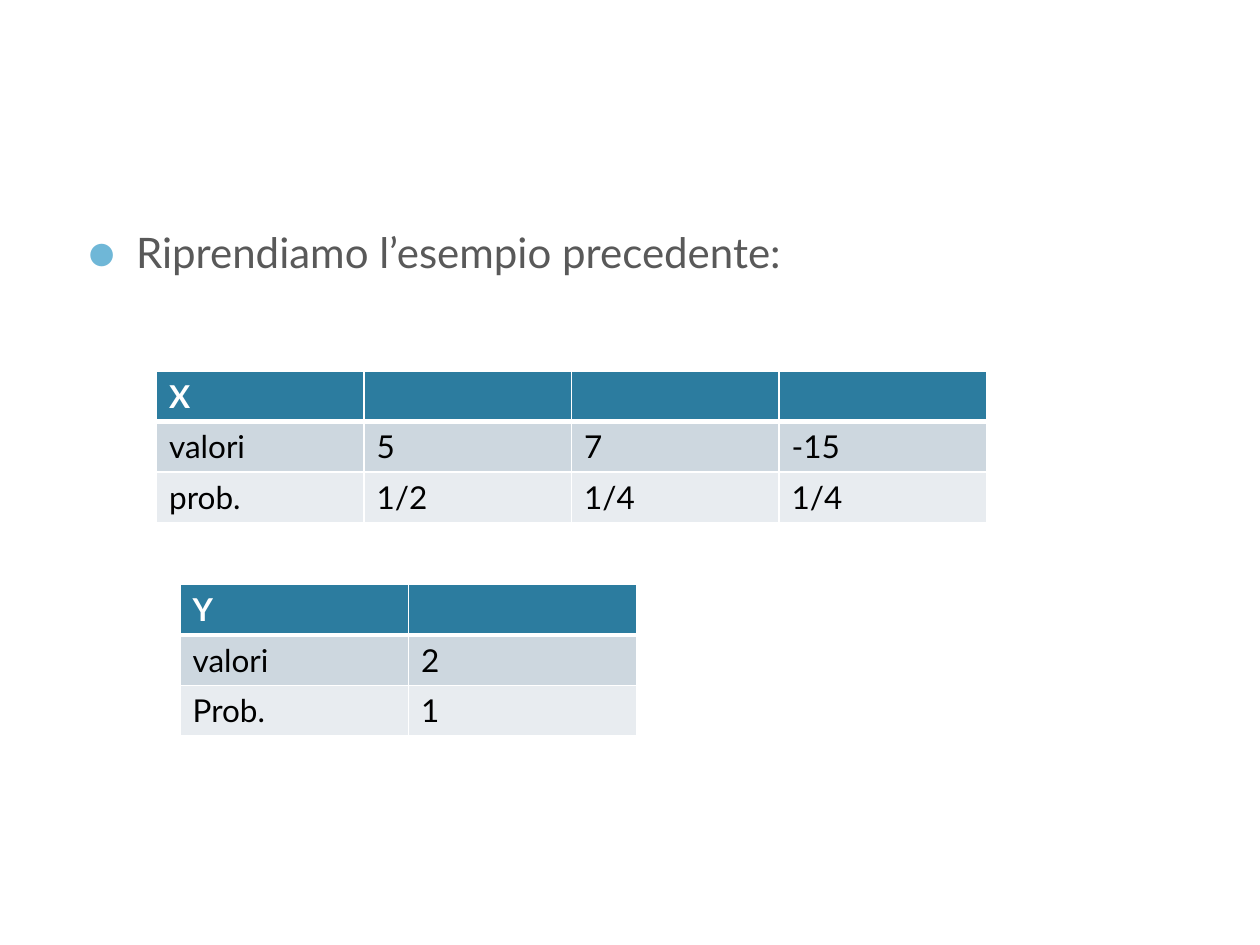
from dataclasses import dataclass

from lxml import etree
from pptx import Presentation
from pptx.dml.color import RGBColor
from pptx.oxml import ns
from pptx.util import Pt


@dataclass(frozen=True)
class Theme:
    font: str = "Lato"
    body: int = 24
    cell: int = 18
    grey: str = "595959"
    black: str = "000000"
    white: str = "FFFFFF"
    dot: str = "6FB7D7"
    head: str = "2C7C9F"
    bands: tuple = ("CDD7DF", "E8ECF0")


THEME = Theme()
ROW = 28.8


def node(parent, tag, **attrs):
    return etree.SubElement(parent, ns.qn(tag), attrs)


def write(frame, words, size=THEME.cell, color=THEME.black, bold=False):
    para = frame.paragraphs[0]
    para.font.size = Pt(size)
    if words:
        run = para.add_run()
        run.text = words
        font = run.font
        font.name, font.size, font.bold = THEME.font, Pt(size), bold
        font.color.rgb = RGBColor.from_string(color)
    return para


def bullet(para, indent):
    props = para._p.get_or_add_pPr()
    props.set("marL", str(Pt(indent)))
    props.set("indent", str(-Pt(indent)))
    node(node(props, "a:buClr"), "a:srgbClr", val=THEME.dot)
    node(props, "a:buSzPct", val="110000")
    node(props, "a:buFont", typeface=THEME.font)
    node(props, "a:buChar", char="●")


def border(cell, base):
    props = cell._tc.get_or_add_tcPr()
    for side, width in (("L", 1), ("R", 1), ("T", 1), ("B", base)):
        line = node(props, f"a:ln{side}", w=str(Pt(width)))
        node(node(line, "a:solidFill"), "a:srgbClr", val=THEME.white)


def grid(slide, left, top, width, rows):
    count = len(rows[0])
    table = slide.shapes.add_table(
        len(rows), count, Pt(left), Pt(top), Pt(width), Pt(ROW * len(rows))
    ).table
    for col in table.columns:
        col.width = Pt(width / count)
    for i, row in enumerate(rows):
        head = i == 0
        fill = THEME.head if head else THEME.bands[(i - 1) % 2]
        for j, words in enumerate(row):
            cell = table.cell(i, j)
            border(cell, 3 if head else 1)
            cell.fill.solid()
            cell.fill.fore_color.rgb = RGBColor.from_string(fill)
            color = THEME.white if head else THEME.black
            write(cell.text_frame, words, color=color, bold=head)


def intro(slide, words):
    box = slide.shapes.add_textbox(Pt(43.2), Pt(126), Pt(633.6), Pt(342))
    box.text_frame.word_wrap = True
    para = write(box.text_frame, words, size=THEME.body, color=THEME.grey)
    para.space_before = Pt(20)
    bullet(para, 27.5)


def main():
    deck = Presentation()
    deck.slide_width, deck.slide_height = Pt(720), Pt(540)
    slide = deck.slides.add_slide(deck.slide_layouts[6])
    intro(slide, "Riprendiamo l’esempio precedente:")
    grid(slide, 89.5, 212, 474.4, [
        ("X", "", "", ""),
        ("valori", "5", "7", "-15"),
        ("prob.", "1/2", "1/4", "1/4"),
    ])
    grid(slide, 102.9, 334, 261, [
        ("Y", ""),
        ("valori", "2"),
        ("Prob.", "1"),
    ])
    deck.save("out.pptx")


if __name__ == "__main__":
    main()
